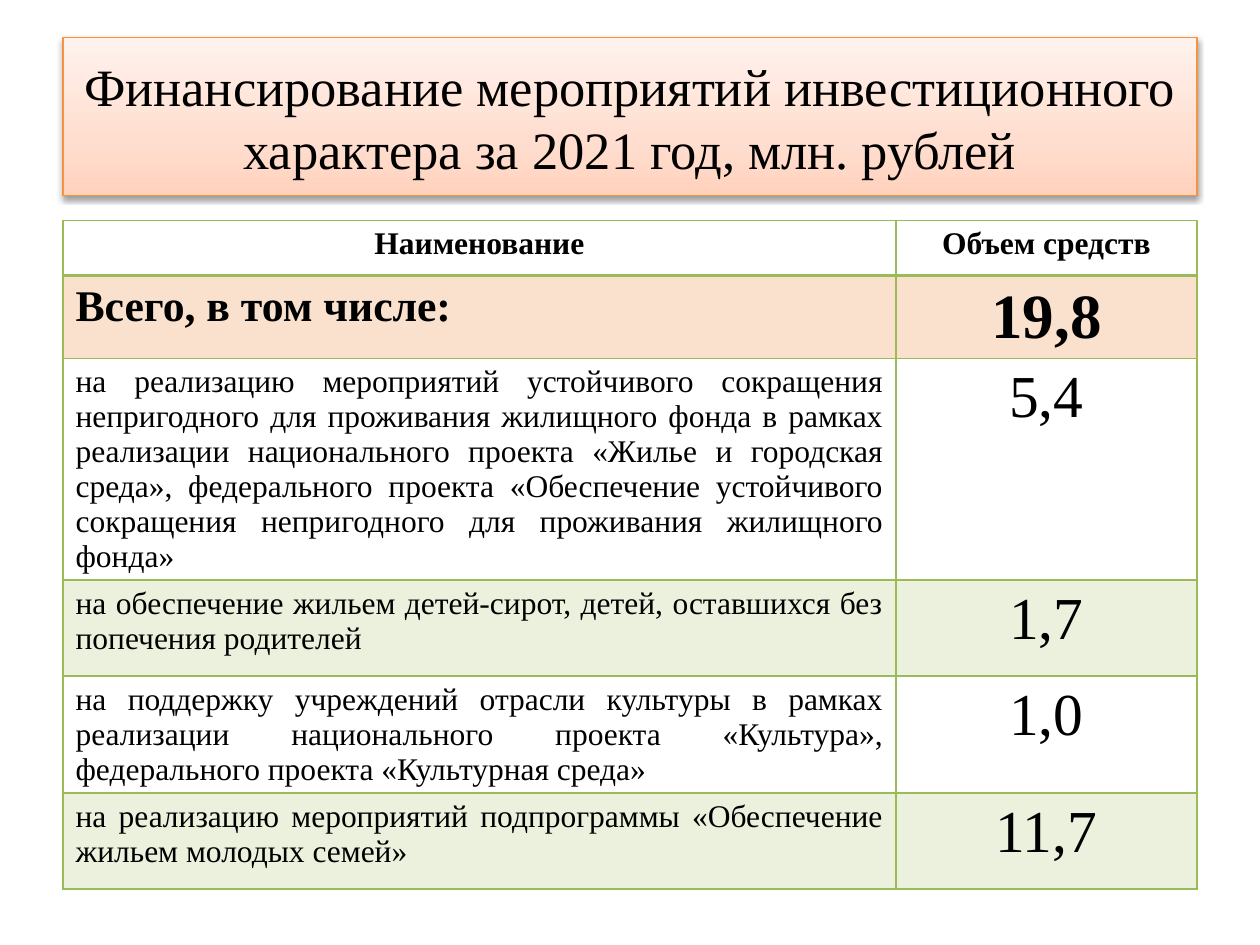
from typing import NamedTuple

from lxml.etree import SubElement
from pptx import Presentation
from pptx.dml.color import RGBColor
from pptx.enum.text import MSO_ANCHOR, MSO_AUTO_SIZE, PP_ALIGN
from pptx.oxml import parse_xml
from pptx.oxml.ns import nsdecls, qn
from pptx.util import Inches, Pt

BLACK = RGBColor(0, 0, 0)
GREEN = RGBColor(0x9B, 0xBB, 0x59)
ORANGE = RGBColor(0xE4, 0x6C, 0x0A)
EDGE = RGBColor(0xF6, 0x92, 0x40)
STOPS = (
    (0, RGBColor(0xFF, 0xD2, 0xBD)),
    (35, RGBColor(0xFF, 0xDE, 0xD0)),
    (100, RGBColor(0xFF, 0xF2, 0xED)),
)
FONT = "Times New Roman"
LEFT, WIDTH = 0.05, 0.9
COLS = (6.61, 2.39)


class Row(NamedTuple):
    """One line of the funding table."""

    name: str
    value: str
    height: float = 0.76
    sizes: tuple[int, int] = (18, 34)
    align: PP_ALIGN = PP_ALIGN.JUSTIFY
    bold: bool = False
    tint: RGBColor | None = None


ROWS = (
    Row("Наименование", "Объем средств", 0.44, (18, 18), PP_ALIGN.CENTER, True),
    Row("Всего, в том числе:", "19,8", 0.61, (25, 36), PP_ALIGN.LEFT, True, ORANGE),
    Row("на реализацию мероприятий устойчивого сокращения непригодного для "
        "проживания жилищного фонда в рамках реализации национального проекта "
        "«Жилье и городская среда», федерального проекта «Обеспечение "
        "устойчивого сокращения непригодного для проживания жилищного фонда»", "5,4"),
    Row("на обеспечение жильем детей-сирот, детей, оставшихся без попечения "
        "родителей", "1,7", tint=GREEN),
    Row("на поддержку учреждений отрасли культуры в рамках реализации "
        "национального проекта «Культура», федерального проекта "
        "«Культурная среда»", "1,0"),
    Row("на реализацию мероприятий подпрограммы «Обеспечение жильем молодых "
        "семей»", "11,7", tint=GREEN),
)


def style(para, size: float, align: PP_ALIGN, bold: bool = False) -> None:
    """Set the font and alignment of a paragraph."""
    para.alignment = align
    font = para.font
    font.name, font.size, font.bold = FONT, Pt(size), bold
    font.color.rgb = BLACK


def border(cell, top: float, bottom: float) -> None:
    """Draw green lines on the four sides of a cell."""
    props = cell._tc.get_or_add_tcPr()
    sides = (("lnL", 1), ("lnR", 1), ("lnT", top), ("lnB", bottom))
    for spot, (tag, width) in enumerate(sides):
        line = parse_xml(
            f'<a:{tag} {nsdecls("a")} w="{Pt(width)}"><a:solidFill>'
            f'<a:srgbClr val="{GREEN}"/></a:solidFill></a:{tag}>')
        props.insert(spot, line)


def paint(cell, tint: RGBColor | None) -> None:
    """Fill a cell with a pale tint, or leave it clear."""
    if tint is None:
        cell.fill.background()
        return
    cell.fill.solid()
    cell.fill.fore_color.rgb = tint
    color = cell._tc.tcPr.find(f"{qn('a:solidFill')}/{qn('a:srgbClr')}")
    SubElement(color, qn("a:alpha"), val="20000")


def head(title, deck) -> None:
    """Place and format the title."""
    title.left, title.top = int(deck.slide_width * LEFT), int(deck.slide_height * 0.04)
    title.width, title.height = int(deck.slide_width * WIDTH), Inches(1.25)
    stops = "".join(
        f'<a:gs pos="{pos * 1000}"><a:srgbClr val="{color}"/></a:gs>'
        for pos, color in STOPS)
    props = title._element.spPr
    props.append(parse_xml(
        f'<a:gradFill {nsdecls("a")} rotWithShape="1"><a:gsLst>{stops}</a:gsLst>'
        '<a:lin ang="16200000" scaled="1"/></a:gradFill>'))
    title.line.color.rgb = EDGE
    title.line.width = Pt(0.75)
    props.append(parse_xml(
        f'<a:effectLst {nsdecls("a")}><a:outerShdw blurRad="{Pt(3.1)}" '
        f'dist="{Pt(1.6)}" dir="5400000" rotWithShape="0"><a:srgbClr val="{BLACK}">'
        '<a:alpha val="38000"/></a:srgbClr></a:outerShdw></a:effectLst>'))
    frame = title.text_frame
    frame.text = ("Финансирование мероприятий инвестиционного характера "
                  "за 2021 год, млн. рублей")
    frame.word_wrap = True
    frame.auto_size = MSO_AUTO_SIZE.NONE
    frame.vertical_anchor = MSO_ANCHOR.MIDDLE
    style(frame.paragraphs[0], 30, PP_ALIGN.CENTER)


def grid(slide, deck) -> None:
    """Build the funding table."""
    table = slide.shapes.add_table(
        len(ROWS), len(COLS), int(deck.slide_width * LEFT), Inches(1.75),
        int(deck.slide_width * WIDTH), Inches(sum(row.height for row in ROWS))).table
    table.horz_banding = False
    for col, width in zip(table.columns, COLS):
        col.width = Inches(width)
    for num, row in enumerate(ROWS):
        table.rows[num].height = Inches(row.height)
        texts, aligns = (row.name, row.value), (row.align, PP_ALIGN.CENTER)
        for col, (text, size, align) in enumerate(zip(texts, row.sizes, aligns)):
            cell = table.cell(num, col)
            cell.text = text
            style(cell.text_frame.paragraphs[0], size, align, row.bold)
            paint(cell, row.tint)
            border(cell, 2 if num == 1 else 1, 2 if num == 0 else 1)


def main() -> None:
    """Build and save the slide."""
    deck = Presentation()
    deck.slide_width, deck.slide_height = Inches(10), Inches(7.5)
    slide = deck.slides.add_slide(deck.slide_layouts[5])
    head(slide.shapes.title, deck)
    grid(slide, deck)
    deck.save("out.pptx")


if __name__ == "__main__":
    main()
